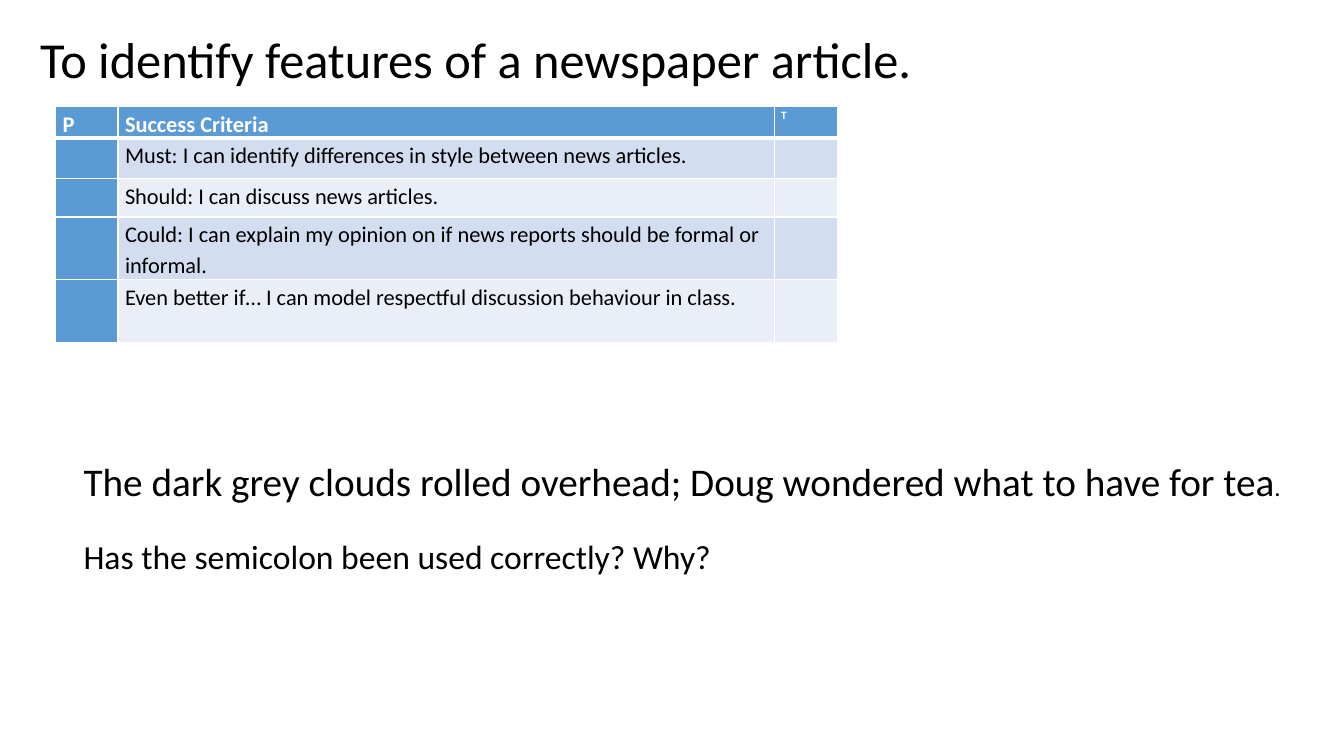
import dataclasses

import lxml.etree
import pptx
import pptx.dml.color
import pptx.enum.text
import pptx.oxml.ns
import pptx.presentation
import pptx.shapes.base
import pptx.slide
import pptx.table
import pptx.text.text
import pptx.util

FONT = "Calibri"
BLACK = pptx.dml.color.RGBColor(0x00, 0x00, 0x00)
WHITE = pptx.dml.color.RGBColor(0xFF, 0xFF, 0xFF)
BLUE = pptx.dml.color.RGBColor(0x5B, 0x9B, 0xD5)
BANDS = (
    pptx.dml.color.RGBColor(0xD2, 0xDE, 0xEF),
    pptx.dml.color.RGBColor(0xEA, 0xEF, 0xF7),
)

SLIDE_WIDTH = pptx.util.Inches(13.33)
SLIDE_HEIGHT = pptx.util.Inches(7.5)
COLUMN_SHARES = (4.65, 48.83, 4.73)


@dataclasses.dataclass(frozen=True)
class Area:
    """A rectangle in percent of the slide's width and height."""

    left: float
    top: float
    width: float
    height: float


@dataclasses.dataclass(frozen=True)
class Criterion:
    text: str
    height: float
    spacing: float = 0


TITLE_AREA = Area(-1.65, 0, 75, 12.53)
TABLE_AREA = Area(4.13, 14.13, sum(COLUMN_SHARES), 29.47)
QUESTION_AREA = Area(5.48, 59.87, 91.95, 17.07)

HEADINGS = (("P", 16), ("Success Criteria", 16), ("T", 8))
HEADING_HEIGHT = 3.87
CRITERIA = (
    Criterion("Must: I can identify differences in style between news articles.", 5.33, 2),
    Criterion("Should: I can discuss news articles.", 5.07, 2),
    Criterion(
        "Could: I can explain my opinion on if news reports should be formal or informal.",
        6.93,
    ),
    Criterion("Even better if… I can model respectful discussion behaviour in class.", 8.27),
)


def across(percent: float) -> int:
    return round(SLIDE_WIDTH * percent / 100)


def down(percent: float) -> int:
    return round(SLIDE_HEIGHT * percent / 100)


def bounds(area: Area) -> tuple[int, int, int, int]:
    return across(area.left), down(area.top), across(area.width), down(area.height)


def style_runs(
    para: pptx.text.text._Paragraph,
    size: float,
    color: pptx.dml.color.RGBColor = BLACK,
    bold: bool = False,
) -> None:
    for span in para.runs:
        span.font.name = FONT
        span.font.size = pptx.util.Pt(size)
        span.font.color.rgb = color
        span.font.bold = bold


def add_border(cell: pptx.table._Cell, side: str, width: float) -> None:
    properties = cell._tc.get_or_add_tcPr()
    line = lxml.etree.SubElement(
        properties, pptx.oxml.ns.qn(f"a:ln{side}"), w=str(pptx.util.Pt(width))
    )
    fill = lxml.etree.SubElement(line, pptx.oxml.ns.qn("a:solidFill"))
    lxml.etree.SubElement(fill, pptx.oxml.ns.qn("a:srgbClr"), val=str(WHITE))


def paint_cell(
    cell: pptx.table._Cell, row: int, color: pptx.dml.color.RGBColor
) -> None:
    """Set the insets, the white borders and the fill; a thick line ends the heading row."""
    cell.margin_left = cell.margin_right = pptx.util.Inches(0.07)
    cell.margin_top = cell.margin_bottom = 0
    widths = {"L": 1, "R": 1, "T": 3 if row == 1 else 1, "B": 3 if row == 0 else 1}
    for side, width in widths.items():
        add_border(cell, side, width)
    cell.fill.solid()
    cell.fill.fore_color.rgb = color


def write_cell(
    cell: pptx.table._Cell,
    text: str,
    size: float,
    color: pptx.dml.color.RGBColor,
    bold: bool = False,
    spacing: float = 0,
) -> None:
    para = cell.text_frame.paragraphs[0]
    para.text = text
    para.line_spacing = 1.15
    para.space_before = para.space_after = pptx.util.Pt(spacing)
    style_runs(para, size, color, bold)


def add_title(page: pptx.slide.Slide) -> None:
    title = page.shapes.title
    title.left, title.top, title.width, title.height = bounds(TITLE_AREA)
    frame = title.text_frame
    frame.text = "To identify features of a newspaper article. "
    frame.vertical_anchor = pptx.enum.text.MSO_ANCHOR.BOTTOM
    frame.auto_size = pptx.enum.text.MSO_AUTO_SIZE.NONE
    para = frame.paragraphs[0]
    para.alignment = pptx.enum.text.PP_ALIGN.CENTER
    para.line_spacing = 0.9
    style_runs(para, 36)


def add_criteria_table(page: pptx.slide.Slide) -> None:
    table = page.shapes.add_table(
        len(CRITERIA) + 1, len(HEADINGS), *bounds(TABLE_AREA)
    ).table
    for column, share in zip(table.columns, COLUMN_SHARES):
        column.width = across(share)

    table.rows[0].height = down(HEADING_HEIGHT)
    for index, (heading, size) in enumerate(HEADINGS):
        cell = table.cell(0, index)
        paint_cell(cell, 0, BLUE)
        write_cell(cell, heading, size, WHITE, bold=True)

    for row, criterion in enumerate(CRITERIA, start=1):
        table.rows[row].height = down(criterion.height)
        band = BANDS[(row - 1) % len(BANDS)]
        for index, color in enumerate((BLUE, band, band)):
            paint_cell(table.cell(row, index), row, color)
        write_cell(
            table.cell(row, 1), criterion.text, 16, BLACK, spacing=criterion.spacing
        )


def add_question(page: pptx.slide.Slide) -> None:
    box = page.shapes.add_textbox(*bounds(QUESTION_AREA))
    frame = box.text_frame
    frame.word_wrap = False
    frame.auto_size = pptx.enum.text.MSO_AUTO_SIZE.SHAPE_TO_FIT_TEXT

    sentence = frame.paragraphs[0]
    sentence.text = (
        "The dark grey clouds rolled overhead; Doug wondered what to have for tea"
    )
    full_stop = sentence.add_run()
    full_stop.text = "."
    style_runs(sentence, 28)
    full_stop.font.size = pptx.util.Pt(18)

    question = frame.add_paragraph()
    question.text = "Has the semicolon been used correctly? Why?"
    question.space_before = pptx.util.Pt(22)
    style_runs(question, 24)


def main() -> None:
    deck = pptx.Presentation()
    deck.slide_width, deck.slide_height = SLIDE_WIDTH, SLIDE_HEIGHT
    page = deck.slides.add_slide(deck.slide_layouts[0])
    subtitle = page.placeholders[1].element
    subtitle.getparent().remove(subtitle)
    add_title(page)
    add_criteria_table(page)
    add_question(page)
    deck.save("out.pptx")


if __name__ == "__main__":
    main()
